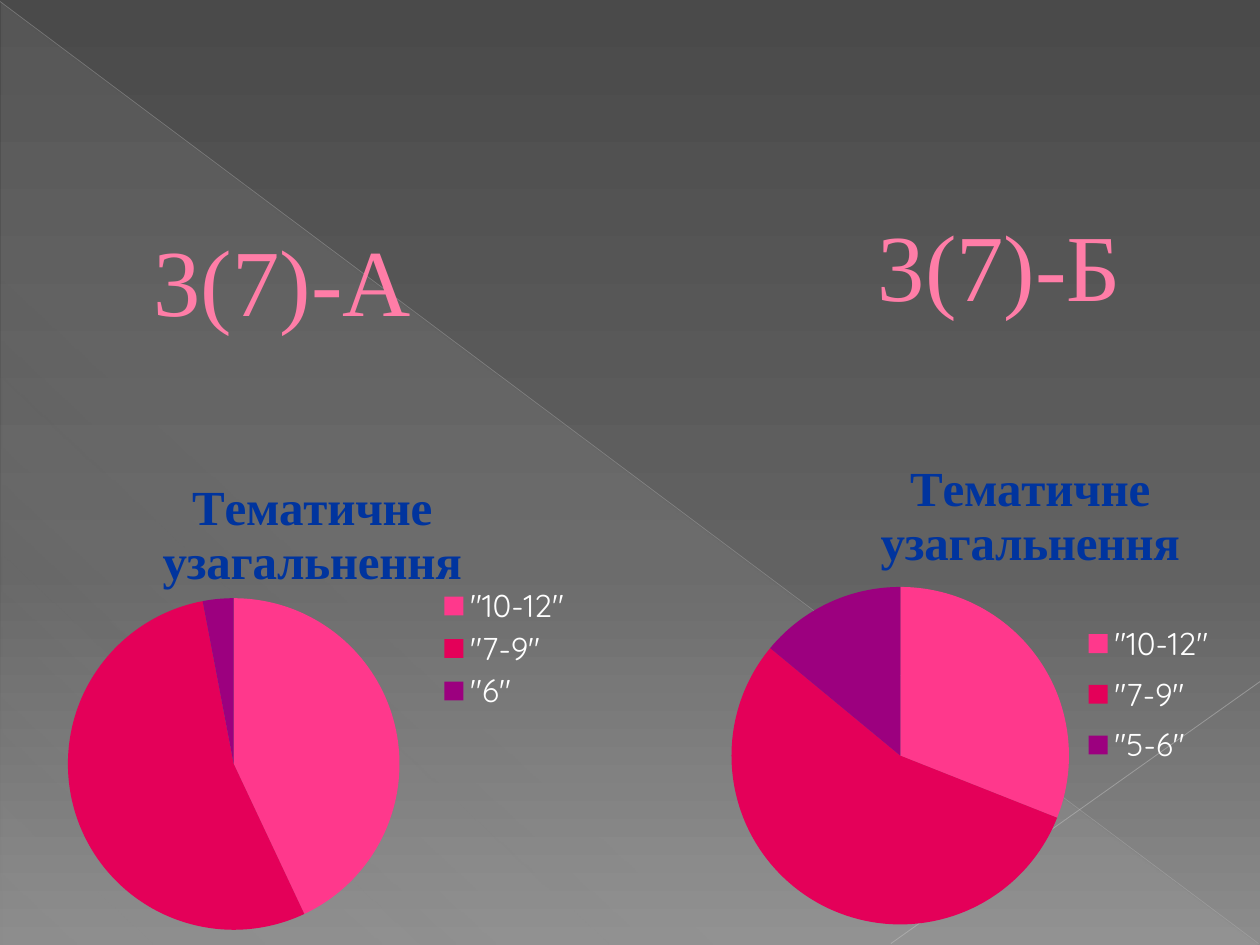
from dataclasses import dataclass

from lxml import etree
from pptx import Presentation
from pptx.chart.data import CategoryChartData
from pptx.dml.color import RGBColor
from pptx.enum.chart import XL_CHART_TYPE, XL_LEGEND_POSITION
from pptx.enum.shapes import MSO_CONNECTOR, MSO_SHAPE
from pptx.enum.text import MSO_ANCHOR
from pptx.oxml.ns import qn
from pptx.util import Cm, Pt

PIE = XL_CHART_TYPE.PIE
RIGHT = XL_LEGEND_POSITION.RIGHT
LINE = MSO_CONNECTOR.STRAIGHT
WEDGE = MSO_SHAPE.RIGHT_TRIANGLE
MIDDLE = MSO_ANCHOR.MIDDLE


@dataclass(frozen=True)
class Theme:
    back: tuple = ((0, "4A4A4A", 100), (60, "626262", 100), (100, "8C8C8C", 100))
    veil: tuple = ((0, "D2D2D2", 10), (70, "D2D2D2", 8), (100, "D2D2D2", 1))
    hues: tuple = ("FF388C", "E40059", "9C007F")
    long: str = "BFBFBF"
    short: str = "C6C6C6"
    head: str = "FF7DA7"
    edge: str = "B12761"
    title: str = "00349E"
    key: str = "FFFFFF"
    serif: str = "Times New Roman"
    sans: str = "Quicksand"
    big: int = 54
    mid: int = 28
    small: int = 18


def add(node, tag, **attrs):
    return etree.SubElement(node, qn(tag), {k: str(v) for k, v in attrs.items()})


def tint(node, color, alpha):
    add(add(node, "a:srgbClr", val=color), "a:alpha", val=alpha * 1000)


def place(node, index, spot, inner=False):
    for old in node.findall(qn("c:layout")):
        node.remove(old)
    layout = etree.Element(qn("c:layout"))
    manual = add(layout, "c:manualLayout")
    if inner:
        add(manual, "c:layoutTarget", val="inner")
    for axis in "xy":
        add(manual, f"c:{axis}Mode", val="edge")
    for name, value in zip("xywh", spot):
        add(manual, f"c:{name}", val=value)
    node.insert(index, layout)


class Deck:
    """Draws styled elements on the current slide."""

    def __init__(self, theme):
        self.theme = theme
        self.prs = Presentation()
        self.prs.slide_width, self.prs.slide_height = Cm(25.4), Cm(19.05)
        self.slide = self.prs.slides.add_slide(self.prs.slide_layouts[6])
        self.shapes = self.slide.shapes

    def blend(self, fill, root, stops, angle):
        fill.gradient()
        grad = next(root.iter(qn("a:gradFill")))
        ramp = grad.find(qn("a:gsLst"))
        for old in list(ramp):
            ramp.remove(old)
        for pos, color, alpha in stops:
            tint(add(ramp, "a:gs", pos=pos * 1000), color, alpha)
        grad.find(qn("a:lin")).set("ang", str(angle * 60000))

    def back(self):
        self.blend(self.slide.background.fill, self.slide.element, self.theme.back, 90)

    def veil(self, *box):
        shape = self.shapes.add_shape(WEDGE, *map(Cm, box))
        shape.shadow.inherit = False
        shape.line.fill.background()
        self.blend(shape.fill, shape.element, self.theme.veil, 133)

    def line(self, ends, color, width, alpha):
        line = self.shapes.add_connector(LINE, *map(Cm, ends))
        line.line.width = Pt(width)
        line.line.color.rgb = RGBColor.from_string(color)
        paint = next(line.element.spPr.iter(qn("a:srgbClr")))
        add(paint, "a:alpha", val=alpha * 1000)
        add(line.element.spPr, "a:effectLst")

    def font(self, font, face, size, color):
        font.name, font.size = face, Pt(size)
        font.color.rgb = RGBColor.from_string(color)

    def head(self, text, *box):
        frame = self.shapes.add_textbox(*map(Cm, box)).text_frame
        frame.word_wrap = True
        frame.vertical_anchor = MIDDLE
        frame.text = text
        para = frame.paragraphs[0]
        run = para.runs[0]
        theme = self.theme
        self.font(run.font, theme.serif, theme.big, theme.head)
        para._p.get_or_add_pPr().set("marL", str(Cm(1.35)))
        edge = etree.Element(qn("a:ln"), w=str(Pt(0.5)))
        tint(add(edge, "a:solidFill"), theme.edge, 100)
        run._r.get_or_add_rPr().insert(0, edge)

    def pie(self, box, title, data, spots):
        source = CategoryChartData()
        source.categories = list(data)
        source.add_series(title, list(data.values()))
        chart = self.shapes.add_chart(PIE, *map(Cm, box), source).chart
        theme = self.theme
        self.font(chart.font, theme.sans, theme.small, theme.key)
        chart.has_title = True
        frame = chart.chart_title.text_frame
        frame.text = title
        font = frame.paragraphs[0].runs[0].font
        self.font(font, theme.serif, theme.mid, theme.title)
        font.bold = True
        chart.has_legend = True
        chart.legend.position = RIGHT
        chart.legend.include_in_layout = False
        plot = chart.plots[0]
        plot.vary_by_categories = True
        for i, color in enumerate(theme.hues):
            fill = plot.series[0].points[i].format.fill
            fill.solid()
            fill.fore_color.rgb = RGBColor.from_string(color)
        for tag, index, spot in zip(("title", "plotArea", "legend"), (1, 0, 1), spots):
            node = next(chart.element.iter(qn(f"c:{tag}")))
            place(node, index, spot, tag == "plotArea")


def main():
    theme = Theme()
    deck = Deck(theme)
    deck.back()
    deck.veil(0.03, 0.05, 25.35, 19)
    deck.line((0, 0.03, 25.37, 19.02), theme.long, 0.39, 35)
    deck.line((25.4, 13.74, 17.96, 19.02), theme.short, 0.47, 45)
    topic = "Тематичне узагальнення"
    deck.pie((0, 8.92, 12.4, 10.13), topic, {'"10-12"': 43, '"7-9"': 54, '"6"': 3},
             ((0.25, 0.05), (0.11, 0.31, 0.54, 0.66), (0.71, 0.28, 0.22, 0.26)))
    deck.pie((13.89, 8.74, 11.51, 10.31), topic, {'"10-12"': 31, '"7-9"': 55, '"5-6"': 14},
             ((0.32, 0.03), (0.07, 0.3, 0.6, 0.66), (0.69, 0.35, 0.23, 0.32)))
    deck.head("3(7)-А", 1.5, 4.93, 7.19, 1.37)
    deck.head("3(7)-Б", 16.1, 4.32, 8.61, 1.98)
    deck.prs.save("out.pptx")


if __name__ == "__main__":
    main()
